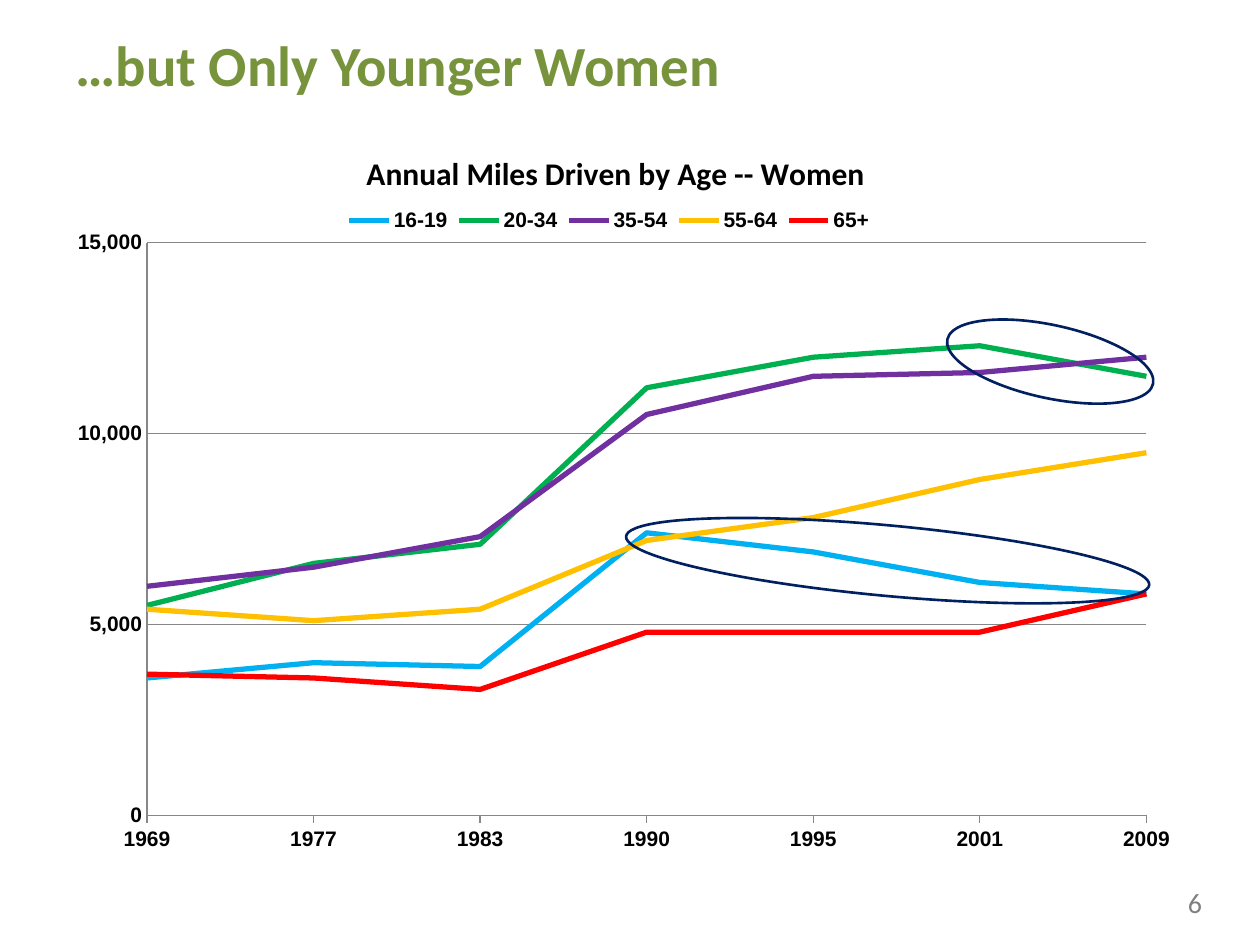
from lxml import etree
from pptx import Presentation
from pptx.chart.data import CategoryChartData
from pptx.dml.color import RGBColor
from pptx.enum.chart import XL_CHART_TYPE, XL_LEGEND_POSITION, XL_TICK_MARK
from pptx.enum.shapes import MSO_SHAPE
from pptx.enum.text import MSO_ANCHOR
from pptx.oxml.ns import qn
from pptx.util import Inches, Pt

LINE_CHART = XL_CHART_TYPE.LINE
TOP = XL_LEGEND_POSITION.TOP
TICK_NONE, TICK_OUT = XL_TICK_MARK.NONE, XL_TICK_MARK.OUTSIDE
OVAL = MSO_SHAPE.OVAL
MIDDLE = MSO_ANCHOR.MIDDLE

COLORS = {"title": "77933C", "number": "808080", "text": "000000",
          "axis": "878787", "ring": "002060"}
TITLE = "…but Only Younger Women"
PAGE = "6"
CHART_TITLE = "Annual Miles Driven by Age -- Women"
YEARS = ["1969", "1977", "1983", "1990", "1995", "2001", "2009"]
SERIES = [
    ("16-19", "00B0F0", [3600, 4000, 3900, 7400, 6900, 6100, 5800]),
    ("20-34", "00B050", [5500, 6600, 7100, 11200, 12000, 12300, 11500]),
    ("35-54", "7030A0", [6000, 6500, 7300, 10500, 11500, 11600, 12000]),
    ("55-64", "FFC000", [5400, 5100, 5400, 7200, 7800, 8800, 9500]),
    ("65+", "FF0000", [3700, 3600, 3300, 4800, 4800, 4800, 5800]),
]
# Inches: left, top, width, height
TITLE_BOX = (0.5, 0.17, 9, 0.67)
PAGE_BOX = (9.33, 6.98, 0.5, 0.37)
CHART_BOX = (0.25, 0.92, 9.17, 5.92)
RINGS = [((7.5, 2.58, 1.67, 0.58), 12.2), ((4.96, 4.17, 4.17, 0.56), 5.3)]
# Shares of the chart's size
PLOT_AREA = {"x": 0.1, "y": 0.17, "w": 0.865, "h": 0.768}
LEGEND_AREA = {"x": 0.265, "y": 0.12, "w": 0.47, "h": 0.04}
CHART_TITLE_AREA = {"x": 0.285, "y": 0.04}


def rgb(value):
    return RGBColor.from_string(value)


def inches(box):
    return [Inches(v) for v in box]


def style(font, size, color, name, bold=False):
    font.size, font.name, font.bold = Pt(size), name, bold
    font.color.rgb = rgb(color)


def add_text(slide, box, text, size, color, bold=False):
    tf = slide.shapes.add_textbox(*inches(box)).text_frame
    tf.word_wrap = True
    tf.vertical_anchor = MIDDLE
    p = tf.paragraphs[0]
    p.text = text
    style(p.font, size, color, "Calibri", bold)


def place(element, area, following, inner=False):
    """Give a chart part a manual layout, just ahead of its child tag following."""
    for old in element.findall(qn("c:layout")):
        element.remove(old)
    layout = etree.Element(qn("c:layout"))
    manual = etree.SubElement(layout, qn("c:manualLayout"))
    if inner:
        etree.SubElement(manual, qn("c:layoutTarget")).set("val", "inner")
    for key in ("x", "y"):
        etree.SubElement(manual, qn(f"c:{key}Mode")).set("val", "edge")
    for key, value in area.items():
        etree.SubElement(manual, qn(f"c:{key}")).set("val", str(value))
    element.find(qn(following)).addprevious(layout)


def style_axis(axis, tick):
    style(axis.tick_labels.font, 12, COLORS["text"], "Arial", True)
    axis.major_tick_mark, axis.minor_tick_mark = tick, TICK_NONE
    axis.format.line.color.rgb = rgb(COLORS["axis"])
    axis.format.line.width = Pt(0.75)


def start_lines_on_axis(root):
    """Put the first and last category on the edges of the plot."""
    for old in root.findall(".//" + qn("c:crossBetween")):
        old.getparent().remove(old)
    cross = etree.Element(qn("c:crossBetween"))
    cross.set("val", "midCat")
    root.find(".//" + qn("c:majorUnit")).addprevious(cross)


def add_line_chart(slide):
    data = CategoryChartData(number_format="#,##0")
    data.categories = YEARS
    for name, _, values in SERIES:
        data.add_series(name, values)
    chart = slide.shapes.add_chart(LINE_CHART, *inches(CHART_BOX), data).chart
    style(chart.font, 10, COLORS["text"], "Calibri")

    chart.has_title = True
    p = chart.chart_title.text_frame.paragraphs[0]
    p.text = CHART_TITLE
    style(p.font, 18, COLORS["text"], "Calibri", True)

    chart.has_legend = True
    chart.legend.position = TOP
    chart.legend.include_in_layout = False
    style(chart.legend.font, 12, COLORS["text"], "Arial", True)

    style_axis(chart.category_axis, TICK_OUT)
    values = chart.value_axis
    style_axis(values, TICK_NONE)
    values.minimum_scale, values.maximum_scale, values.major_unit = 0, 15000, 5000
    values.tick_labels.number_format = "#,##0"
    values.tick_labels.number_format_is_linked = False
    values.has_major_gridlines = True
    values.major_gridlines.format.line.color.rgb = rgb(COLORS["axis"])
    values.major_gridlines.format.line.width = Pt(0.75)

    chart.plots[0].vary_by_categories = False
    for series, (_, color, _) in zip(chart.plots[0].series, SERIES):
        series.smooth = False
        series.format.line.color.rgb = rgb(color)
        series.format.line.width = Pt(3)

    root = chart.element if hasattr(chart, "element") else chart._chartSpace
    start_lines_on_axis(root)
    place(root.find(".//" + qn("c:title")), CHART_TITLE_AREA, "c:overlay")
    place(root.find(".//" + qn("c:plotArea")), PLOT_AREA, "c:lineChart", inner=True)
    place(root.find(".//" + qn("c:legend")), LEGEND_AREA, "c:overlay")


def add_ring(slide, box, angle):
    sp = slide.shapes.add_shape(OVAL, *inches(box))
    sp.rotation = angle
    sp.shadow.inherit = False
    sp.fill.background()
    sp.line.color.rgb = rgb(COLORS["ring"])
    sp.line.width = Pt(1.5)


def main():
    prs = Presentation()
    prs.slide_width, prs.slide_height = Inches(10), Inches(7.5)
    slide = prs.slides.add_slide(prs.slide_layouts[6])
    add_text(slide, PAGE_BOX, PAGE, 16, COLORS["number"])
    add_text(slide, TITLE_BOX, TITLE, 32.4, COLORS["title"], bold=True)
    add_line_chart(slide)
    for box, angle in RINGS:
        add_ring(slide, box, angle)
    prs.save("out.pptx")


if __name__ == "__main__":
    main()
